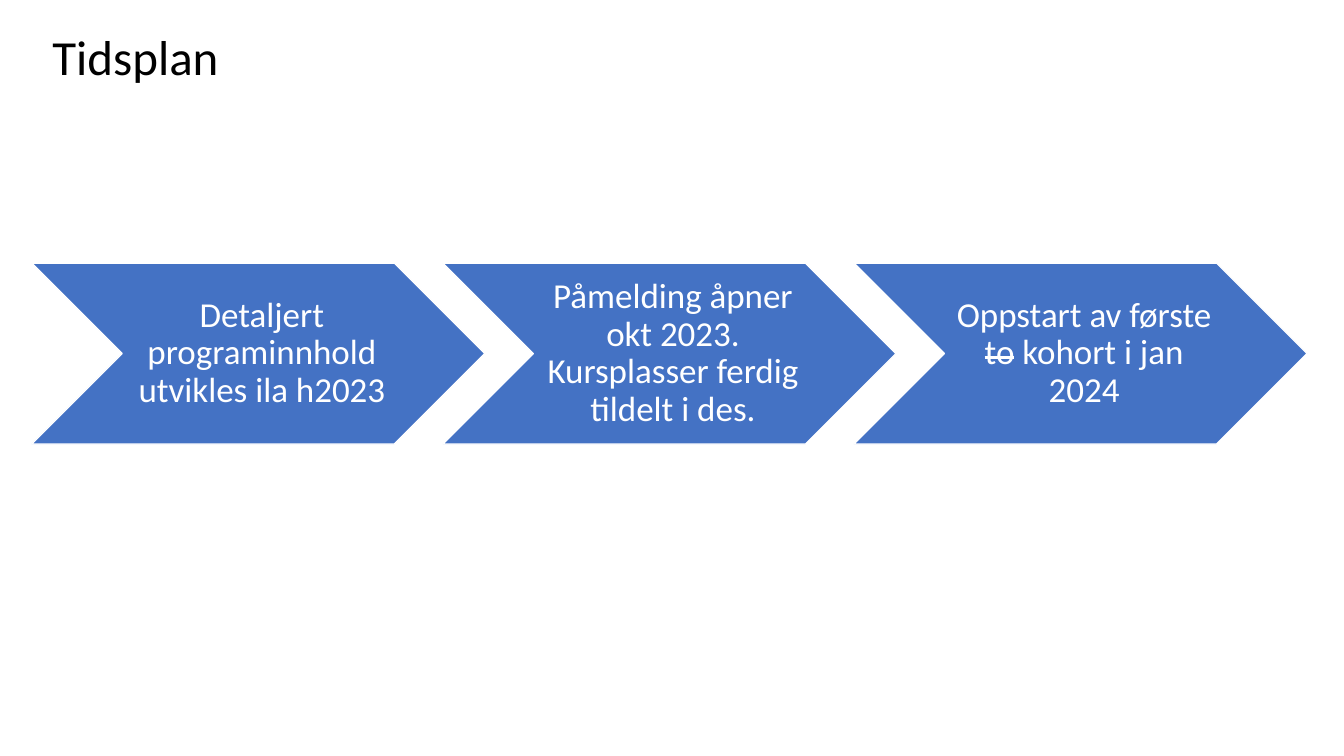
from pptx import Presentation, util as u
from pptx.dml.color import RGBColor
from pptx.enum import shapes, text

BLUE, WHITE, BLACK = "4472C4", "FFFFFF", "000000"


def color(value):
    return RGBColor.from_string(value)


def write(shape, spans, size, ink, align, insets):
    """Fill a shape with one paragraph; spans are (words, struck) pairs."""
    frame = shape.text_frame
    frame.word_wrap = True
    frame.vertical_anchor = text.MSO_ANCHOR.MIDDLE
    frame.margin_left, frame.margin_top, frame.margin_right, frame.margin_bottom = map(u.Cm, insets)
    para = frame.paragraphs[0]
    para.alignment = align
    para.line_spacing = 0.9
    for words, struck in spans:
        span = para.add_run()
        span.text = words
        span.font.name = "Calibri"
        span.font.size = u.Pt(size)
        span.font.color.rgb = color(ink)
        if struck:
            span._r.get_or_add_rPr().set("strike", "sngStrike")


deck = Presentation()
deck.slide_width, deck.slide_height = u.Cm(33.87), u.Cm(19.05)
page = deck.slides.add_slide(deck.slide_layouts[6])

# Title
title = page.shapes.add_textbox(u.Cm(1.07), u.Cm(0.46), u.Cm(31.75), u.Cm(2.08))
write(title, [("Tidsplan", False)], size=35, ink=BLACK,
      align=text.PP_ALIGN.LEFT, insets=(0.25, 0.13, 0.25, 0.13))

# Timeline of chevrons, evenly stepped
steps = [
    [("Detaljert programinnhold utvikles ila h2023", False)],
    [("Påmelding åpner okt 2023. Kursplasser ferdig tildelt i des.", False)],
    [("Oppstart av første ", False), ("to", True), (" kohort i jan 2024", False)],
]
left, top, width, height, pitch = 0.8, 6.63, 11.42, 4.56, 10.36
pitch = 10.26 + 0.1
for index, spans in enumerate(steps):
    chevron = page.shapes.add_shape(shapes.MSO_SHAPE.CHEVRON, u.Cm(left + index * pitch),
                                    u.Cm(top), u.Cm(width), u.Cm(height))
    chevron.shadow.inherit = False
    chevron.fill.solid()
    chevron.fill.fore_color.rgb = color(BLUE)
    chevron.line.color.rgb = color(WHITE)
    chevron.line.width = u.Pt(1)
    write(chevron, spans, size=25, ink=WHITE,
          align=text.PP_ALIGN.CENTER, insets=(0.28, 0.1, 0.1, 0.1))

deck.save("out.pptx")
